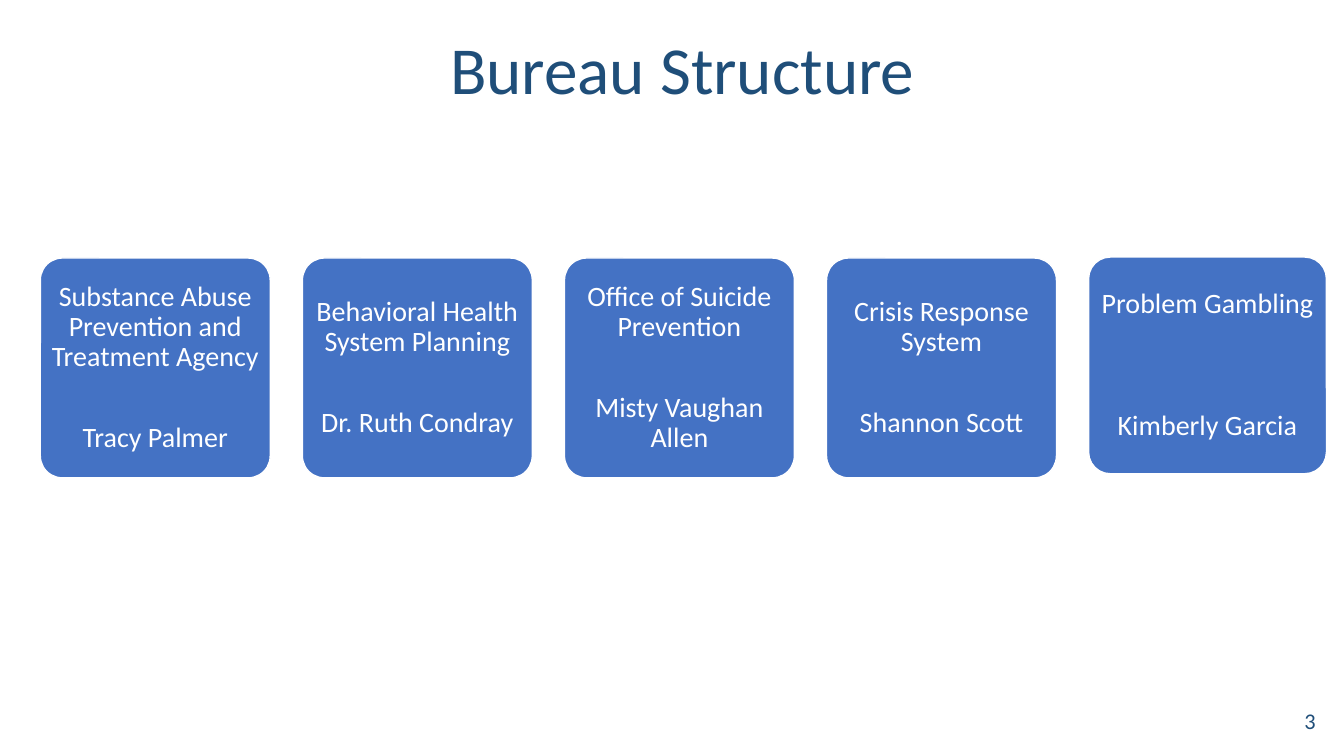
from pptx import Presentation
from pptx.dml.color import RGBColor
from pptx.enum.shapes import MSO_SHAPE
from pptx.enum.text import MSO_ANCHOR, PP_ALIGN
from pptx.util import Pt

ROUNDED = MSO_SHAPE.ROUNDED_RECTANGLE
MIDDLE = MSO_ANCHOR.MIDDLE
CENTER, RIGHT = PP_ALIGN.CENTER, PP_ALIGN.RIGHT

TITLE = "Bureau Structure"
PAGE_NUMBER = "3"
OFFICES = [
    ("Substance Abuse Prevention and Treatment Agency", "Tracy Palmer"),
    ("Behavioral Health System Planning", "Dr. Ruth Condray"),
    ("Office of Suicide Prevention", "Misty Vaughan Allen"),
    ("Crisis Response System", "Shannon Scott"),
    ("Problem Gambling", "Kimberly Garcia"),
]

THEME = {
    "font": "Calibri",
    "navy": RGBColor(0x1F, 0x4E, 0x79),
    "blue": RGBColor(0x44, 0x72, 0xC4),
    "white": RGBColor(0xFF, 0xFF, 0xFF),
    "title": 48,
    "card": 20,
    "number": 16,
}

CARD_LEFT, CARD_PITCH = 28.8, 187.2
CARD_FRAME = (184.3, 164.2, 157)
LAST_CARD_FRAME = (183.6, 169.9, 154.8)
NAME_GAP, LAST_NAME_GAP = 36, 65


def write(p, text, size, color, align, spacing=0.9):
    p.alignment = align
    p.line_spacing = spacing
    r = p.add_run()
    r.text = text
    r.font.name = THEME["font"]
    r.font.size = Pt(THEME[size])
    r.font.color.rgb = THEME[color]


def add_label(s, frame, text, size, align, spacing):
    tf = s.shapes.add_textbox(*map(Pt, frame)).text_frame
    tf.word_wrap = True
    tf.vertical_anchor = MIDDLE
    write(tf.paragraphs[0], text, size, "navy", align, spacing)


def add_card(s, left, frame, office, lead, gap):
    top, width, height = frame
    sp = s.shapes.add_shape(ROUNDED, Pt(left), Pt(top), Pt(width), Pt(height))
    sp.adjustments[0] = 0.1
    sp.shadow.inherit = False
    sp.fill.solid()
    sp.fill.fore_color.rgb = THEME["blue"]
    sp.line.color.rgb = THEME["white"]
    sp.line.width = Pt(1)
    tf = sp.text_frame
    tf.word_wrap = True
    tf.vertical_anchor = MIDDLE
    tf.margin_left = tf.margin_right = Pt(3)
    tf.margin_top = tf.margin_bottom = Pt(2)
    write(tf.paragraphs[0], office, "card", "white", CENTER)
    p = tf.add_paragraph()
    p.space_before = Pt(gap)
    write(p, lead, "card", "white", CENTER)


def main():
    prs = Presentation()
    prs.slide_width, prs.slide_height = Pt(960), Pt(540)
    s = prs.slides.add_slide(prs.slide_layouts[6])
    add_label(s, (28, 0, 919, 104.4), TITLE, "title", CENTER, 0.9)
    add_label(s, (730.8, 500.4, 216, 28.8), PAGE_NUMBER, "number", RIGHT, 1.0)
    for i, (office, lead) in enumerate(OFFICES):
        last = i == len(OFFICES) - 1
        frame = LAST_CARD_FRAME if last else CARD_FRAME
        gap = LAST_NAME_GAP if last else NAME_GAP
        add_card(s, CARD_LEFT + i * CARD_PITCH, frame, office, lead, gap)
    prs.save("out.pptx")


if __name__ == "__main__":
    main()
